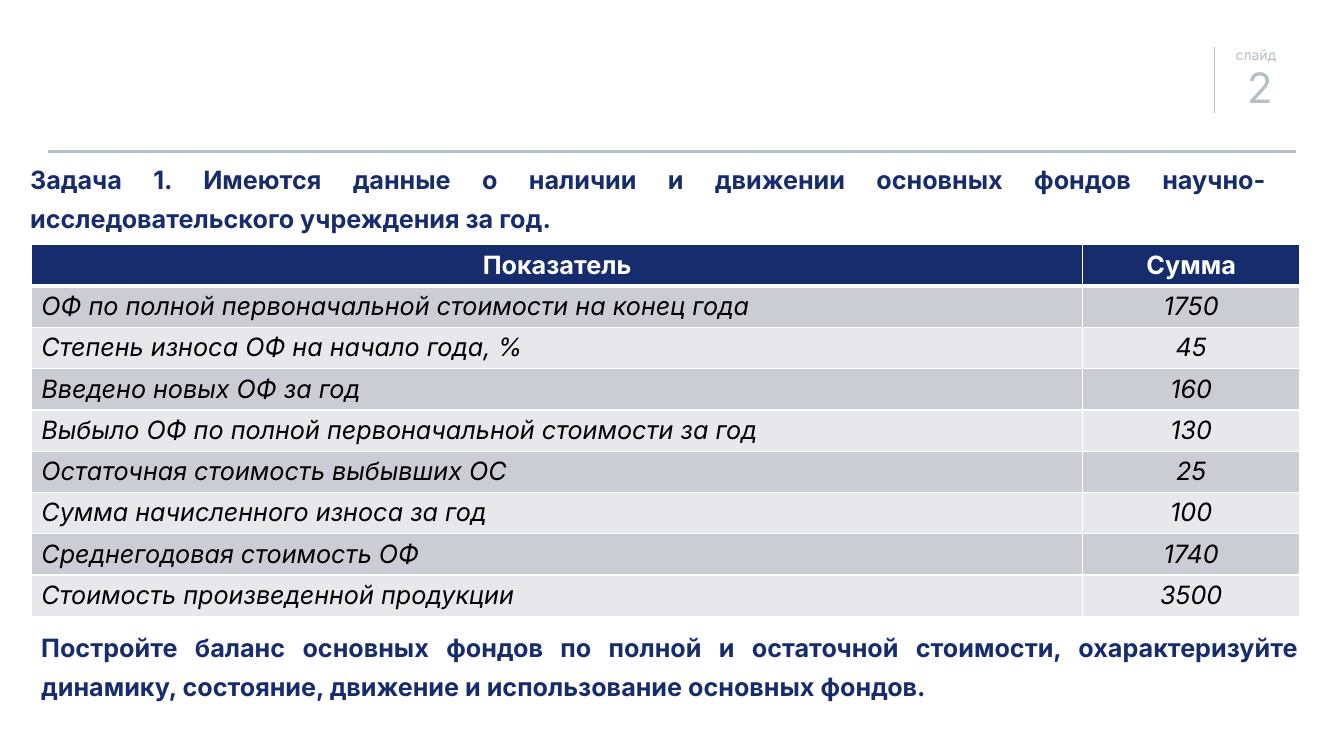
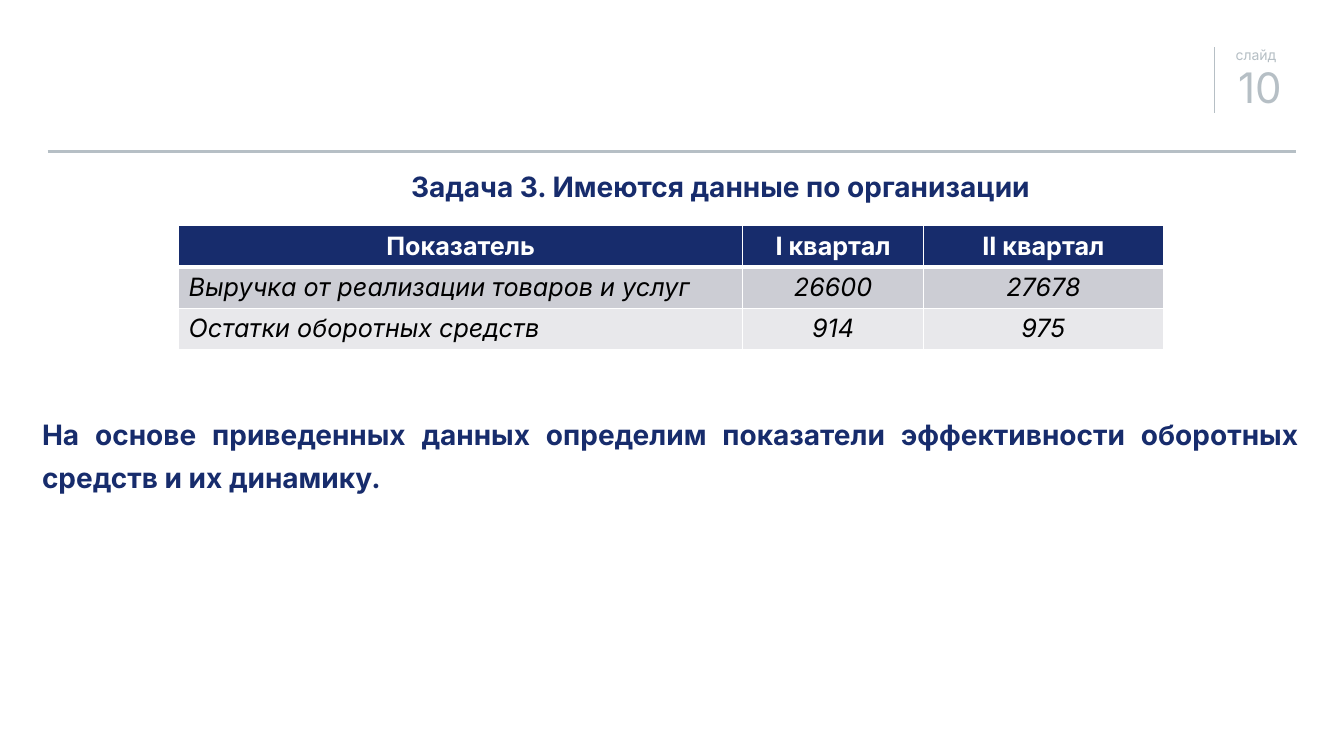
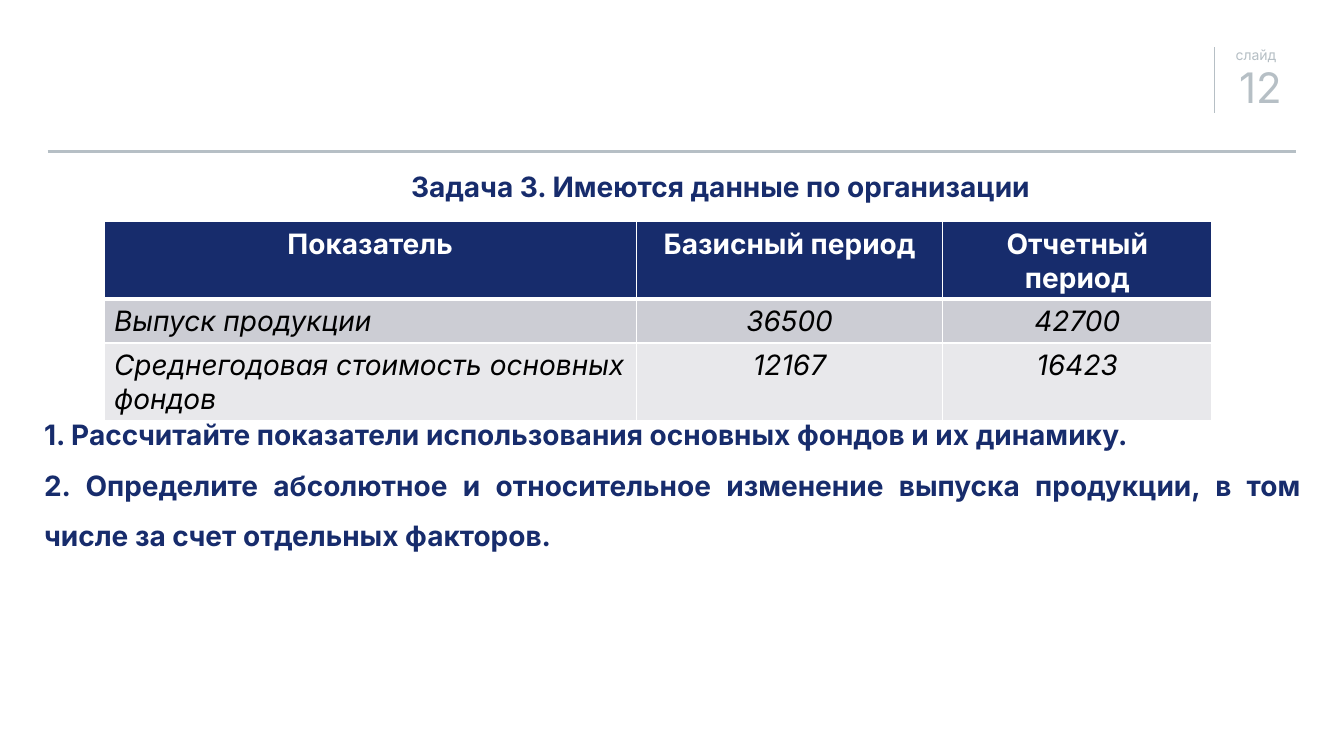
from dataclasses import dataclass

from lxml.etree import SubElement as Sub
from pptx import Presentation
from pptx.dml.color import RGBColor as Rgb
from pptx.enum.shapes import MSO_CONNECTOR as Link
from pptx.enum.text import MSO_ANCHOR as Anchor, PP_ALIGN as Align
from pptx.oxml.ns import qn
from pptx.util import Cm, Pt


@dataclass(frozen=True)
class Theme:
    font: str = "Inter"
    navy: str = "172C6C"
    gray: str = "B6BFC5"
    white: str = "FFFFFF"
    black: str = "000000"
    bands: tuple = ("CCCDD4", "E8E8EB")
    tag: int = 10
    page: int = 30
    small: int = 18
    large: int = 20
    thin: int = 1
    thick: int = 3
    row: float = 1.04


THEME = Theme()


def style(par, size, color, align, bold=False, slant=False):
    par.alignment = align
    font = par.font
    font.name = THEME.font
    font.size = Pt(size)
    font.bold = bold
    font.italic = slant
    font.color.rgb = Rgb.from_string(color)


def add_rule(slide, x, y, wide, high, weight):
    rule = slide.shapes.add_connector(
        Link.STRAIGHT, Cm(x), Cm(y), Cm(x + wide), Cm(y + high))
    rule.line.color.rgb = Rgb.from_string(THEME.gray)
    rule.line.width = Pt(weight)
    Sub(rule._element.spPr, qn("a:effectLst"))


def add_frame(slide, box):
    frame = slide.shapes.add_textbox(*map(Cm, box)).text_frame
    frame.word_wrap = True
    frame.vertical_anchor = Anchor.TOP
    return frame


def add_page(slide, box, number):
    x, y, wide, high = box
    add_rule(slide, x, y, 0, high, 1)
    frame = add_frame(slide, box)
    frame.margin_left = frame.margin_right = frame.margin_bottom = 0
    frame.margin_top = Cm(0.03)
    tag = frame.paragraphs[0]
    tag.text = "слайд"
    tag.line_spacing = Pt(10.6)
    style(tag, THEME.tag, THEME.gray, Align.CENTER)
    page = frame.add_paragraph()
    page.text = str(number)
    page.line_spacing = Pt(34.5)
    page._p.get_or_add_pPr().set("marL", str(Cm(0.23)))
    style(page, THEME.page, THEME.gray, Align.CENTER)


def add_text(slide, box, lines, size, space=1.3):
    frame = add_frame(slide, box)
    for i, line in enumerate(lines):
        par = frame.add_paragraph() if i else frame.paragraphs[0]
        par.text = line
        par.line_spacing = space
        style(par, size, THEME.navy, Align.JUSTIFY, bold=True)


def add_edge(cell, side, weight):
    edge = Sub(cell._tc.get_or_add_tcPr(), qn("a:" + side), w=str(Pt(weight)))
    fill = Sub(edge, qn("a:solidFill"))
    Sub(fill, qn("a:srgbClr"), val=THEME.white)


def fill_cell(cell, text, r, c, size):
    head = r == 0
    edges = {
        "lnL": THEME.thin,
        "lnR": THEME.thin,
        "lnT": THEME.thick if r == 1 else THEME.thin,
        "lnB": THEME.thick if head else THEME.thin,
    }
    for side, weight in edges.items():
        add_edge(cell, side, weight)
    cell.fill.solid()
    tint = THEME.navy if head else THEME.bands[(r - 1) % 2]
    cell.fill.fore_color.rgb = Rgb.from_string(tint)
    cell.text = text
    style(cell.text_frame.paragraphs[0], size,
          THEME.white if head else THEME.black,
          Align.CENTER if head or c else Align.LEFT,
          bold=head, slant=not head)


def add_grid(slide, spot, widths, rows, size):
    x, y = spot
    grid = slide.shapes.add_table(
        len(rows), len(widths), Cm(x), Cm(y),
        Cm(sum(widths)), Cm(THEME.row * len(rows))).table
    grid.first_row = grid.horz_banding = False
    for col, wide in zip(grid.columns, widths):
        col.width = Cm(wide)
    for r, row in enumerate(rows):
        grid.rows[r].height = Cm(THEME.row)
        for c, text in enumerate(row):
            fill_cell(grid.cell(r, c), text, r, c, size)


def add_base(deck, number):
    slide = deck.slides.add_slide(deck.slide_layouts[6])
    add_rule(slide, 1.2, 3.81, 31.47, 0, 2)
    add_page(slide, (30.61, 1.19, 2.08, 1.66), number)
    return slide


def add_third(deck, number):
    slide = add_base(deck, number)
    add_text(slide, (10.11, 3.89, 18.57, 1.37),
             ["Задача 3. Имеются данные по организации"], THEME.large)
    return slide


def add_funds(deck):
    slide = add_base(deck, 2)
    add_text(slide, (0.51, 3.78, 31.65, 3.53), [
        "Задача 1. Имеются данные о наличии и движении основных фондов "
        "научно-исследовательского учреждения за год."], THEME.small)
    add_grid(slide, (0.79, 6.17), (26.5, 5.46), [
        ("Показатель", "Сумма"),
        ("ОФ по полной первоначальной стоимости на конец года", "1750"),
        ("Степень износа ОФ на начало года, %", "45"),
        ("Введено новых ОФ за год", "160"),
        ("Выбыло ОФ по полной первоначальной стоимости за год", "130"),
        ("Остаточная стоимость выбывших ОС", "25"),
        ("Сумма начисленного износа за год", "100"),
        ("Среднегодовая стоимость ОФ", "1740"),
        ("Стоимость произведенной продукции", "3500"),
    ], THEME.small)
    add_text(slide, (0.79, 15.57, 32.18, 2.26), [
        "Постройте баланс основных фондов по полной и остаточной стоимости, "
        "охарактеризуйте динамику, состояние, движение и использование "
        "основных фондов."], THEME.small)


def add_assets(deck):
    slide = add_third(deck, 10)
    add_grid(slide, (4.5, 5.69), (14.22, 4.55, 6.05), [
        ("Показатель", "I квартал", "II квартал"),
        ("Выручка от реализации товаров и услуг", "26600", "27678"),
        ("Остатки оборотных средств", "914", "975"),
    ], THEME.small)
    add_text(slide, (0.81, 10.13, 32.18, 2.36), [
        "На основе приведенных данных определим показатели эффективности "
        "оборотных средств и их динамику."], THEME.large)


def add_output(deck):
    slide = add_third(deck, 12)
    add_grid(slide, (2.62, 5.59), (13.42, 7.72, 6.78), [
        ("Показатель", "Базисный период", "Отчетный период"),
        ("Выпуск продукции", "36500", "42700"),
        ("Среднегодовая стоимость основных фондов", "12167", "16423"),
    ], THEME.large)
    add_text(slide, (0.86, 9.98, 32.18, 3.94), [
        "1. Рассчитайте показатели использования основных фондов "
        "и их динамику.",
        "2. Определите абсолютное и относительное изменение выпуска "
        "продукции, в том числе за счет отдельных факторов.",
    ], THEME.large, space=1.5)


def main():
    deck = Presentation()
    deck.slide_width = Cm(33.87)
    deck.slide_height = Cm(19.05)
    for build in (add_funds, add_assets, add_output):
        build(deck)
    deck.save("out.pptx")


if __name__ == "__main__":
    main()
